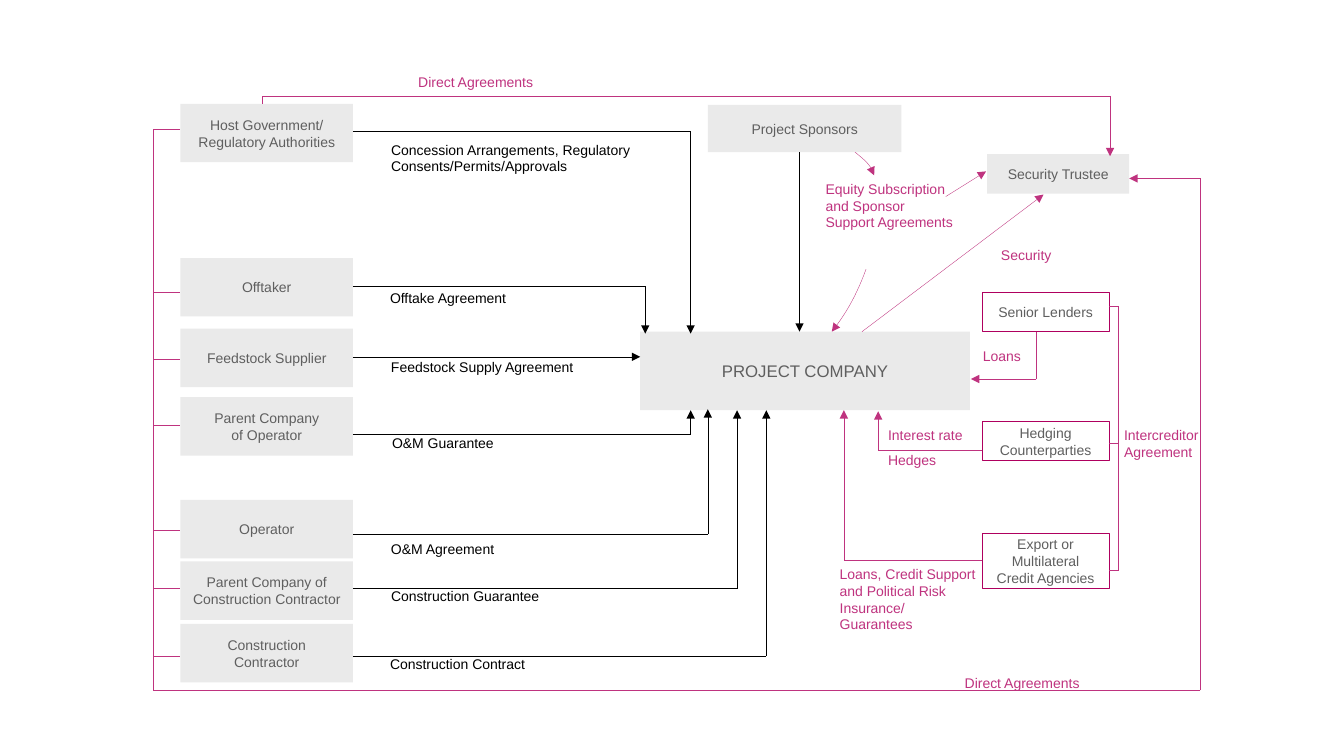
import itertools

import pptx
import pptx.dml.color
import pptx.enum.shapes
import pptx.enum.text
import pptx.oxml.ns
import pptx.util
from lxml import etree

PINK, BORDER, BLACK, GREY, PALE = "BF337F", "AF005F", "000000", "5F5F5F", "EAEAEA"


def rgb(value):
    return pptx.dml.color.RGBColor.from_string(value)


class Diagram:
    """Draws on one slide; lengths are columns and rows of a tenth of an inch."""

    font, size, weight = "Arial", 10, 0.25

    def __init__(self, slide):
        self.shapes = slide.shapes

    def cells(self, *lengths):
        return [pptx.util.Inches(n / 10) for n in lengths]

    def set_text(self, tf, text, color, size=None, align=None):
        tf.text = text
        for p in tf.paragraphs:
            p.alignment = align
            p.font.name = self.font
            p.font.size = pptx.util.Pt(size or self.size)
            p.font.color.rgb = rgb(color)

    def box(self, text, at, fill=None, border=None, size=None):
        sp = self.shapes.add_shape(
            pptx.enum.shapes.MSO_SHAPE.RECTANGLE, *self.cells(*at))
        sp.shadow.inherit = False
        if fill:
            sp.fill.solid()
            sp.fill.fore_color.rgb = rgb(fill)
        else:
            sp.fill.background()
        if border:
            sp.line.color.rgb = rgb(border)
            sp.line.width = pptx.util.Pt(self.weight)
        else:
            sp.line.fill.background()
        tf = sp.text_frame
        tf.word_wrap = False
        tf.vertical_anchor = pptx.enum.text.MSO_ANCHOR.MIDDLE
        self.set_text(tf, text, GREY, size, pptx.enum.text.PP_ALIGN.CENTER)

    def label(self, text, at, color=PINK):
        tf = self.shapes.add_textbox(*self.cells(*at)).text_frame
        tf.word_wrap = True
        tf.auto_size = pptx.enum.text.MSO_AUTO_SIZE.SHAPE_TO_FIT_TEXT
        self.set_text(tf, text, color)

    def stroke(self, sp, color, arrow):
        sp.line.color.rgb = rgb(color)
        sp.line.width = pptx.util.Pt(self.weight)
        if arrow:
            ln = sp.element.spPr.find(pptx.oxml.ns.qn("a:ln"))
            etree.SubElement(ln, pptx.oxml.ns.qn("a:tailEnd"), type="triangle")

    def route(self, *points, color=PINK, arrow=True):
        """Joins the points with straight lines; the last one carries the arrow."""
        for start, end in itertools.pairwise(points):
            cxn = self.shapes.add_connector(
                pptx.enum.shapes.MSO_CONNECTOR.STRAIGHT, *self.cells(*start, *end))
            self.stroke(cxn, color, arrow and end == points[-1])
            etree.SubElement(cxn.element.spPr, pptx.oxml.ns.qn("a:effectLst"))

    def curve(self, *controls, steps=12):
        """Draws an arrow along one cubic curve with four control points."""
        points = []
        for i in range(steps + 1):
            t = i / steps
            weights = (1 - t) ** 3, 3 * t * (1 - t) ** 2, 3 * t * t * (1 - t), t ** 3
            points.append(self.cells(*(
                sum(w * c[axis] for w, c in zip(weights, controls)) for axis in (0, 1))))
        builder = self.shapes.build_freeform(*points[0])
        builder.add_line_segments(points[1:], close=False)
        sp = builder.convert_to_shape()
        sp.shadow.inherit = False
        sp.fill.background()
        self.stroke(sp, PINK, True)


# party, box top, direct agreement row, contract, label box, contract row, arrow tip
CONTRACTS = [
    ("Host Government/\vRegulatory Authorities", 10.3, 12.8,
     "Concession Arrangements, Regulatory Consents/Permits/Approvals",
     (37.8, 13.5, 29.8, 4.4), 13, (68.5, 33.1)),
    ("Offtaker", 25.6, 29, "Offtake Agreement",
     (37.7, 28.2, 23, 2.7), 28.4, (64, 33.1)),
    ("Feedstock Supplier", 32.6, 35.6, "Feedstock Supply Agreement",
     (37.8, 35.1, 22.6, 2.7), 35.4, (63.5, 35.4)),
    ("Parent Company\nof Operator", 39.4, 42.2, "O&M Guarantee",
     (37.9, 42.6, 18.5, 2.7), 43.1, (68.5, 40.7)),
    ("Operator", 49.6, 52.6, "O&M Agreement",
     (37.8, 53.1, 23, 2.7), 53, (70.2, 40.6)),
    ("Parent Company of\nConstruction Contractor", 55.7, 58.4, "Construction Guarantee",
     (37.8, 57.8, 18.5, 2.7), 58.4, (73.1, 40.7)),
    ("Construction\nContractor", 61.9, 65.1, "Construction Contract",
     (37.7, 64.5, 29.1, 2.7), 65.1, (76, 40.7)),
]
LENDERS = [
    ("Senior Lenders", 29, 3.9, 30.4),
    ("Hedging\nCounterparties", 41.8, 3.9, 44),
    ("Export or\nMultilateral\nCredit Agencies", 52.9, 5.5, 56.6),
]
PINK_LABELS = [
    ("Direct Agreements", (40.5, 6.8, 30.7, 2.7)),
    ("Equity Subscription and Sponsor \vSupport Agreements", (80.9, 17.4, 14.7, 7.7)),
    ("Security", (98.3, 24, 9.4, 2.7)),
    ("Loans", (96.5, 34, 7.2, 2.7)),
    ("Interest rate", (87.1, 41.8, 10.2, 2.7)),
    ("Hedges", (87.1, 44.3, 7.7, 2.7)),
    ("Intercreditor\vAgreement", (110.5, 41.8, 11.1, 4.4)),
    ("Loans, Credit Support and Political Risk Insurance/ Guarantees",
     (82.3, 55.6, 16, 7.7)),
    ("Direct Agreements", (94.7, 66.4, 23.6, 2.7)),
]
PARTY_LEFT, PARTY_WIDTH, PARTY_HEIGHT = 17.9, 17.1, 5.8
LENDER_LEFT, LENDER_WIDTH = 97.4, 12.6
DIRECT_LEFT, DIRECT_RIGHT, DIRECT_BOTTOM = 15.2, 119, 68.5
BRACKET = 110.9


def draw_boxes(d):
    for party, top, *_ in CONTRACTS:
        d.box(party, (PARTY_LEFT, top, PARTY_WIDTH, PARTY_HEIGHT), PALE)
    for lender, top, height, _ in LENDERS:
        d.box(lender, (LENDER_LEFT, top, LENDER_WIDTH, height), border=BORDER)
    d.box("Project Sponsors", (70.2, 10.4, 19.2, 4.7), PALE)
    d.box("Security Trustee", (97.9, 15.3, 14.1, 3.9), PALE)
    d.box("PROJECT COMPANY", (63.5, 32.9, 32.7, 7.8), PALE, size=12)


def draw_contracts(d):
    for _, _, direct_row, contract, at, row, tip in CONTRACTS:
        d.route((DIRECT_LEFT, direct_row), (PARTY_LEFT, direct_row), arrow=False)
        corner = [] if tip[1] == row else [(tip[0], row)]
        d.route((PARTY_LEFT + PARTY_WIDTH, row), *corner, tip, color=BLACK)
        d.label(contract, at, BLACK)
    d.route((79.3, 15.1), (79.3, 32.9), color=BLACK)


def draw_financing(d):
    d.route((26, 10.3), (26, 9.5), (110.1, 9.5), (110.1, 15.5))
    d.route((DIRECT_LEFT, 12.8), (DIRECT_LEFT, DIRECT_BOTTOM),
            (DIRECT_RIGHT, DIRECT_BOTTOM), (DIRECT_RIGHT, 17.7), (112, 17.7))
    d.route((93.8, 19.5), (97.8, 17))
    d.route((85.5, 32.9), (103.5, 19.3))
    d.route((102.8, 32.9), (102.8, 37.6), (96.3, 37.6))
    d.route((LENDER_LEFT, 44.7), (87.1, 44.7), (87.1, 40.8))
    d.route((LENDER_LEFT, 55.6), (83.7, 55.6), (83.7, 40.7))
    d.curve((84.8, 15.1), (85.8, 15.9), (86.4, 16.4), (86.7, 17.4))
    d.curve((85.9, 26.7), (85.1, 28.9), (84.1, 30.9), (82.5, 32.9))
    for *_, row in LENDERS:
        d.route((LENDER_LEFT + LENDER_WIDTH, row), (BRACKET, row), arrow=False)
    d.route((BRACKET, LENDERS[0][-1]), (BRACKET, LENDERS[-1][-1]), arrow=False)
    for text, at in PINK_LABELS:
        d.label(text, at)


def main():
    prs = pptx.Presentation()
    prs.slide_width = pptx.util.Inches(13.33)
    prs.slide_height = pptx.util.Inches(7.5)
    d = Diagram(prs.slides.add_slide(prs.slide_layouts[6]))
    draw_boxes(d)
    draw_contracts(d)
    draw_financing(d)
    prs.save("out.pptx")


if __name__ == "__main__":
    main()
